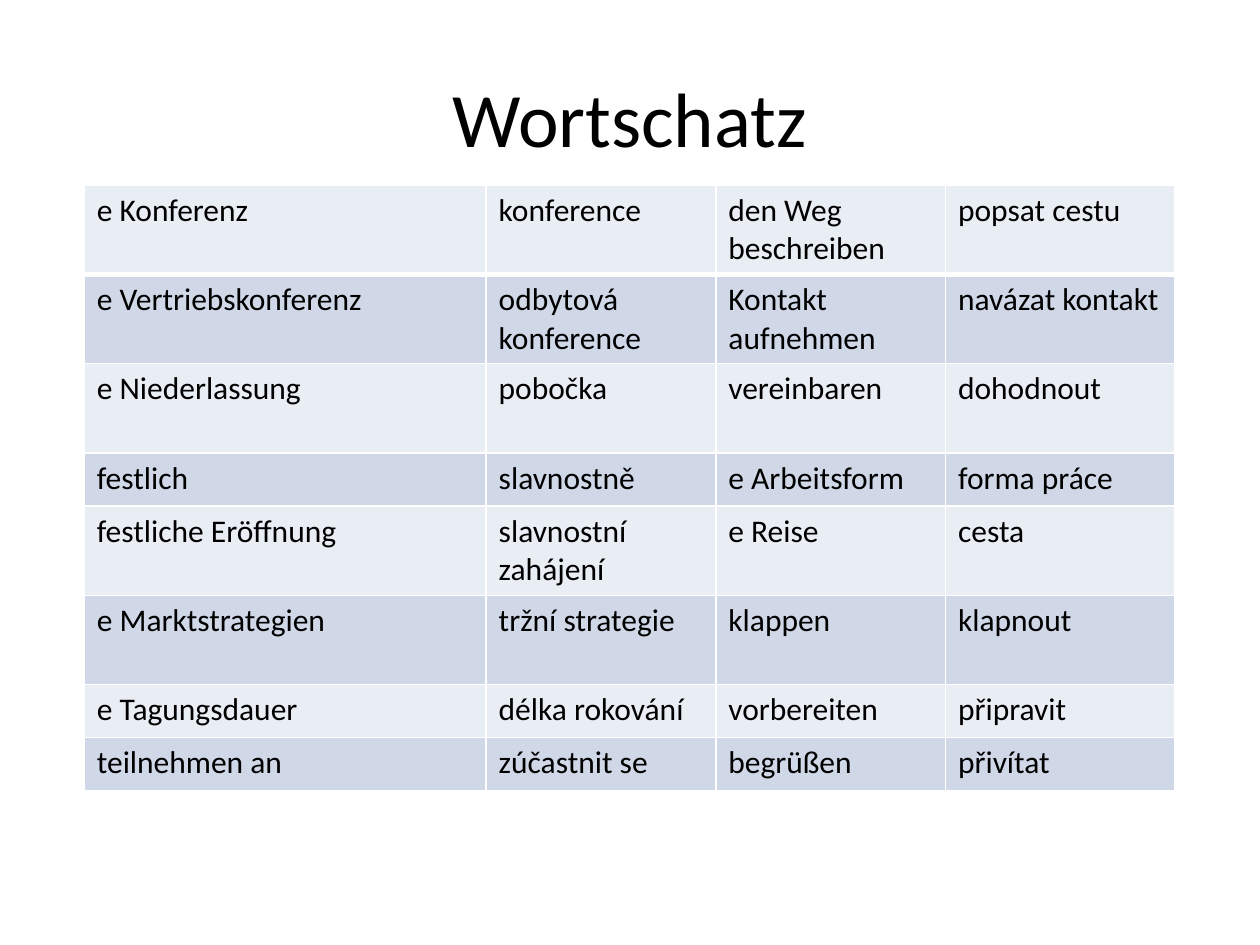
from lxml.etree import SubElement
from pptx import Presentation
from pptx.dml.color import RGBColor as RGB
from pptx.enum.text import MSO_ANCHOR as Anchor, PP_ALIGN as Align
from pptx.oxml.ns import qn
from pptx.util import Cm, Pt

FONT = "Calibri"
BLACK, WHITE = "000000", "FFFFFF"
BANDS = ("E9EDF4", "D0D8E8")
COL_WIDTHS = (8.1, 4.63, 4.63, 4.63)
ONE_LINE, TWO_LINES = 1.07, 1.8

# Row height, then German and Czech words in pairs
VOCABULARY = [
    (TWO_LINES, "e Konferenz", "konference", "den Weg beschreiben", "popsat cestu"),
    (TWO_LINES, "e Vertriebskonferenz", "odbytová konference", "Kontakt aufnehmen", "navázat kontakt"),
    (TWO_LINES, "e Niederlassung", "pobočka", "vereinbaren", "dohodnout"),
    (ONE_LINE, "festlich", "slavnostně", "e Arbeitsform", "forma práce"),
    (TWO_LINES, "festliche Eröffnung", "slavnostní zahájení", "e Reise", "cesta"),
    (TWO_LINES, "e Marktstrategien", "tržní strategie", "klappen", "klapnout"),
    (ONE_LINE, "e Tagungsdauer", "délka rokování", "vorbereiten", "připravit"),
    (ONE_LINE, "teilnehmen an", "zúčastnit se", "begrüßen", "přivítat"),
]


def color(hex_value):
    return RGB.from_string(hex_value)


def set_text(tf, text, size, align=Align.LEFT):
    tf.text = text
    p = tf.paragraphs[0]
    p.alignment = align
    font = p.runs[0].font
    font.name, font.size = FONT, Pt(size)
    font.color.rgb = color(BLACK)


def set_borders(cell, **widths):
    """Draw white borders; widths in points are keyed L, R, T, B in schema order."""
    tc_pr = cell._tc.get_or_add_tcPr()
    for side, width in widths.items():
        ln = SubElement(tc_pr, qn(f"a:ln{side}"), w=str(Pt(width)))
        fill = SubElement(ln, qn("a:solidFill"))
        SubElement(fill, qn("a:srgbClr"), val=WHITE)


def add_title(slide, left, top, width, height):
    tf = slide.shapes.add_textbox(Cm(left), Cm(top), Cm(width), Cm(height)).text_frame
    tf.word_wrap = True
    tf.vertical_anchor = Anchor.MIDDLE
    set_text(tf, "Wortschatz", 44, Align.CENTER)


def add_vocabulary(slide, left, top):
    width, height = sum(COL_WIDTHS), sum(row[0] for row in VOCABULARY)
    table = slide.shapes.add_table(len(VOCABULARY), len(COL_WIDTHS),
                                   Cm(left), Cm(top), Cm(width), Cm(height)).table
    for column, col_width in zip(table.columns, COL_WIDTHS):
        column.width = Cm(col_width)
    for r, (row_height, *words) in enumerate(VOCABULARY):
        table.rows[r].height = Cm(row_height)
        for c, word in enumerate(words):
            cell = table.cell(r, c)
            set_text(cell.text_frame, word, 18)
            set_borders(cell, L=1, R=1, T=3 if r == 1 else 1, B=3 if r == 0 else 1)
            cell.fill.solid()
            cell.fill.fore_color.rgb = color(BANDS[r % 2])


def main():
    prs = Presentation()
    prs.slide_width, prs.slide_height = Cm(25.4), Cm(19.05)
    slide = prs.slides.add_slide(prs.slide_layouts[6])
    add_title(slide, 1.27, 0.76, 22.86, 3.18)
    add_vocabulary(slide, 1.7, 3.73)
    prs.save("out.pptx")


if __name__ == "__main__":
    main()
